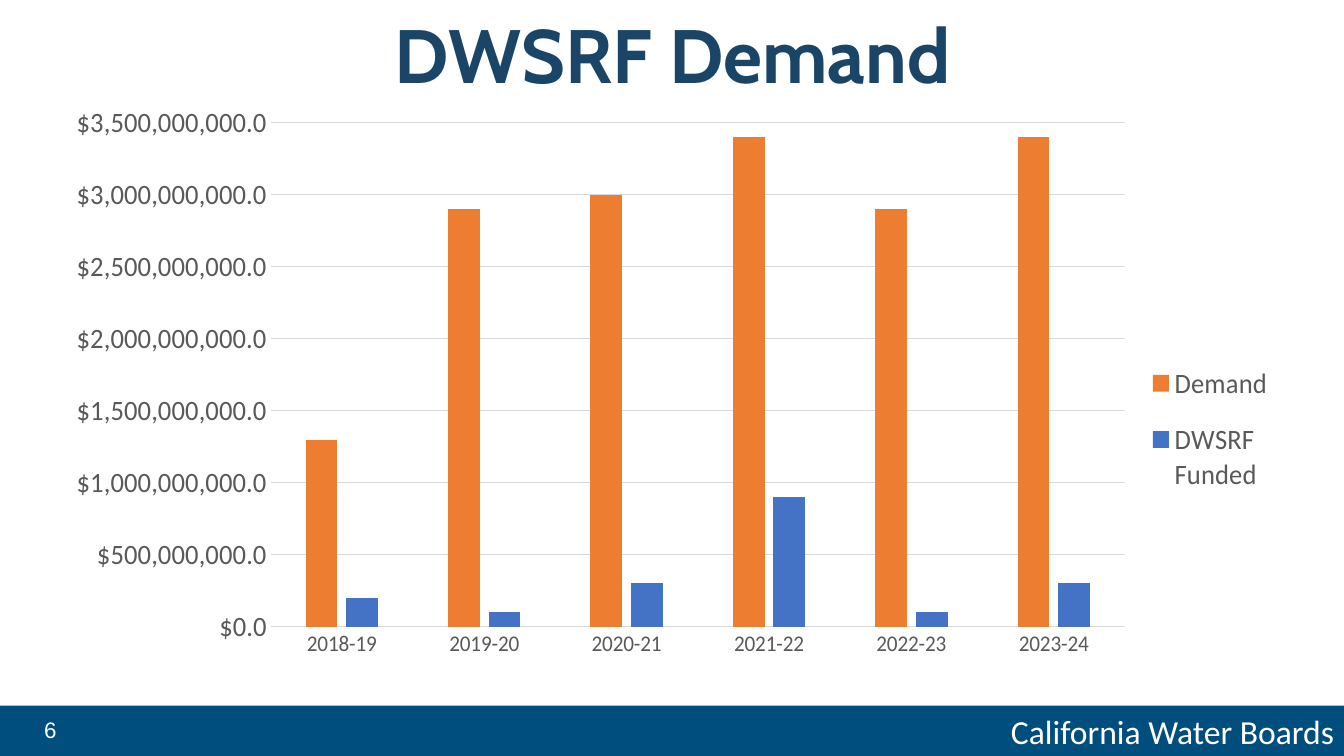
"""Build the DWSRF demand slide: a clustered column chart above a footer band."""
from lxml import etree
from pptx import Presentation
from pptx import util as u
from pptx.chart.data import CategoryChartData
from pptx.dml.color import RGBColor
from pptx.enum import chart as ch, shapes, text
from pptx.oxml.ns import qn

WHITE = RGBColor(0xFF, 0xFF, 0xFF)
BAND_BLUE = RGBColor(0x00, 0x4E, 0x7D)
TITLE_BLUE = RGBColor(0x1A, 0x45, 0x66)
GREY = RGBColor(0x59, 0x59, 0x59)
RULE_GREY = RGBColor(0xD9, 0xD9, 0xD9)
ORANGE = RGBColor(0xED, 0x7D, 0x31)
BLUE = RGBColor(0x44, 0x72, 0xC4)
WIDTH, HEIGHT = u.Inches(13.33), u.Inches(7.5)
BAND_TOP, BAND_HEIGHT = u.Inches(7), u.Inches(0.5)


def write(box, words, font, size, color, align):
    frame = box.text_frame
    frame.word_wrap = True
    frame.vertical_anchor = text.MSO_ANCHOR.MIDDLE
    frame.text = words
    para = frame.paragraphs[0]
    para.alignment = align
    span = para.runs[0]
    span.font.name, span.font.size = font, u.Pt(size)
    span.font.color.rgb = color
    return para


def manual_layout(parent, index, bounds, inner=False):
    for old in parent.findall(qn("c:layout")):
        parent.remove(old)
    layout = etree.Element(qn("c:layout"))
    parent.insert(index, layout)
    manual = etree.SubElement(layout, qn("c:manualLayout"))
    settings = [("layoutTarget", "inner")] if inner else []
    settings += [("xMode", "edge"), ("yMode", "edge"), *zip("xywh", bounds)]
    for name, value in settings:
        etree.SubElement(manual, qn(f"c:{name}")).set("val", str(value))


deck = Presentation()
deck.slide_width, deck.slide_height = WIDTH, HEIGHT
page = deck.slides.add_slide(deck.slide_layouts[6])

band = page.shapes.add_shape(
    shapes.MSO_SHAPE.RECTANGLE, 0, BAND_TOP, WIDTH, BAND_HEIGHT)
band.shadow.inherit = False
band.fill.solid()
band.fill.fore_color.rgb = BAND_BLUE
band.line.fill.background()
write(band, "California Water Boards", "Calibri", 24, WHITE, text.PP_ALIGN.RIGHT)

title = page.shapes.add_textbox(
    u.Inches(0.92), u.Inches(0.18), u.Inches(11.5), u.Inches(0.82))
heading = write(title, "DWSRF Demand", "Cabin", 54, TITLE_BLUE, text.PP_ALIGN.CENTER)
heading.line_spacing = 0.9
heading.runs[0].font.bold = True

data = CategoryChartData(number_format='"$"#,##0.0')
data.categories = [f"20{year}-{year + 1}" for year in range(18, 24)]
hundred_millions = {
    "Demand": (13, 29, 30, 34, 29, 34),
    "DWSRF Funded": (2, 1, 3, 9, 1, 3),
}
for name, amounts in hundred_millions.items():
    data.add_series(name, [amount * 100_000_000 for amount in amounts])
chart = page.shapes.add_chart(
    ch.XL_CHART_TYPE.COLUMN_CLUSTERED, u.Inches(0.76), u.Inches(1),
    u.Inches(12.04), u.Inches(5.76), data).chart
chart.has_title = False
chart.font.name, chart.font.size = "Calibri", u.Pt(10)

plot = chart.plots[0]
plot.vary_by_categories = False
plot.gap_width, plot.overlap = 219, -27
for series, color in zip(plot.series, (ORANGE, BLUE)):
    series.format.fill.solid()
    series.format.fill.fore_color.rgb = color

chart.has_legend = True
legend = chart.legend
legend.position = ch.XL_LEGEND_POSITION.RIGHT
legend.include_in_layout = False

years, dollars = chart.category_axis, chart.value_axis
for font, size in ((years.tick_labels.font, 16), (dollars.tick_labels.font, 20),
                   (legend.font, 20)):
    font.name, font.size = "Calibri", u.Pt(size)
    font.color.rgb = GREY
for axis in (years, dollars):
    axis.major_tick_mark = axis.minor_tick_mark = ch.XL_TICK_MARK.NONE
dollars.minimum_scale, dollars.maximum_scale = 0, 3_500_000_000
dollars.major_unit = 500_000_000
dollars.tick_labels.number_format = '"$"#,##0.0'
dollars.tick_labels.number_format_is_linked = False
dollars.format.line.fill.background()
for line in (years.format.line, dollars.major_gridlines.format.line):
    line.color.rgb = RULE_GREY
    line.width = u.Pt(0.75)

plot_area = chart.element.find(".//" + qn("c:plotArea"))
manual_layout(plot_area, 0, (0.113, 0.038, 0.743, 0.868), inner=True)
legend_part = chart.element.find(".//" + qn("c:legend"))
manual_layout(legend_part, 1, (0.87, 0.42, 0.12, 0.29))

number = page.shapes.add_textbox(0, BAND_TOP, u.Inches(1), BAND_HEIGHT)
folio = write(number, "6", "Arial", 16, WHITE, text.PP_ALIGN.CENTER)
folio.line_spacing = 0.9
folio.space_after = u.Pt(6)

deck.save("out.pptx")
